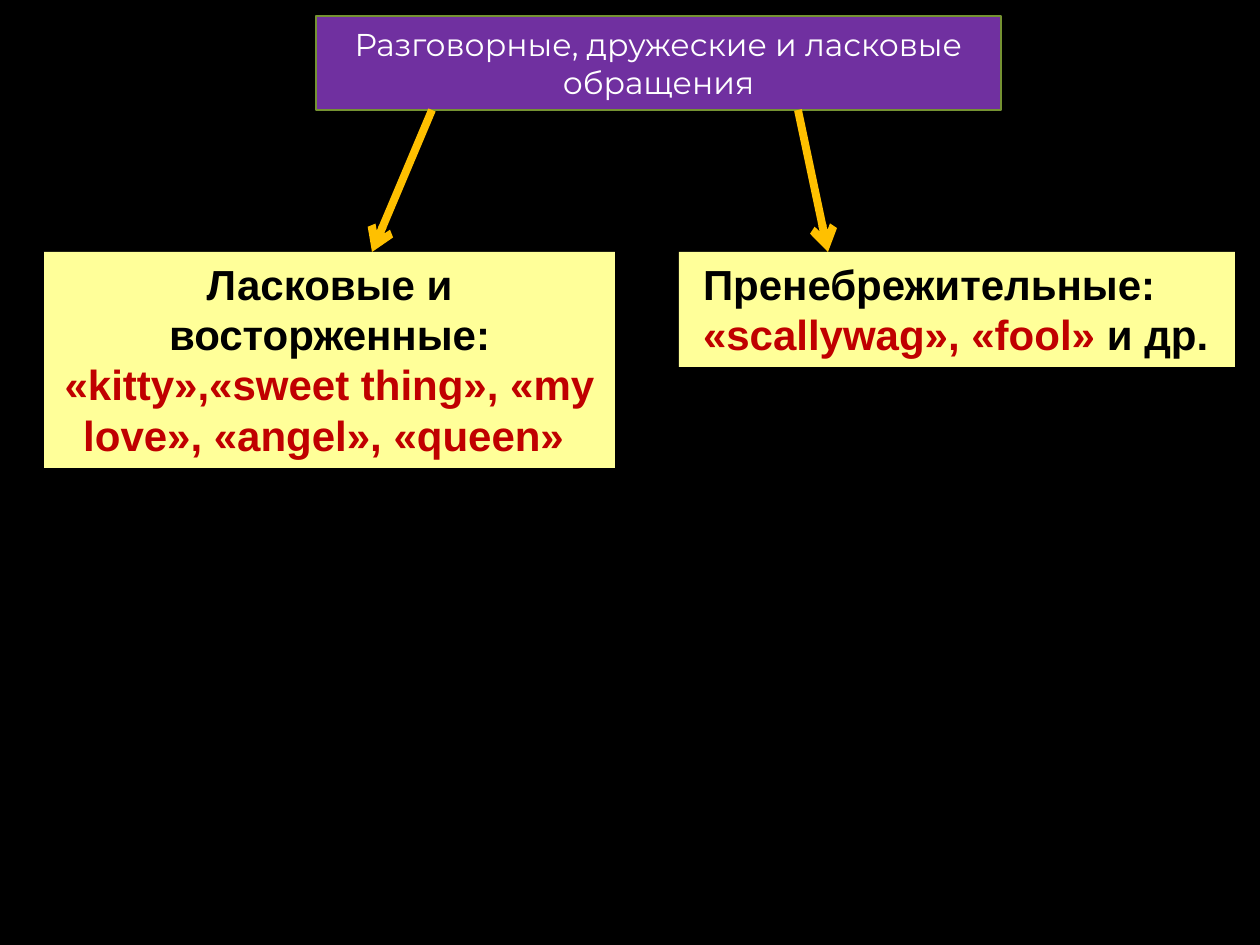
"""Build a slide that sorts informal forms of address into two groups."""
from lxml.etree import SubElement
from pptx import Presentation
from pptx.dml.color import RGBColor
from pptx.enum.shapes import MSO_CONNECTOR
from pptx.enum.text import MSO_ANCHOR, MSO_AUTO_SIZE, PP_ALIGN
from pptx.oxml.ns import qn
from pptx.util import Emu, Pt

PX_PER_INCH = 126
COLORS = {
    "background": "000000",
    "heading": "7030A0",
    "heading_border": "759232",
    "heading_text": "FFFFFF",
    "group": "FFFF99",
    "label": "000000",
    "example": "C00000",
    "arrow": "FFC000",
}


def px(length):
    """Turn pixels into EMU."""
    return Emu(round(length * 914400 / PX_PER_INCH))


def color(name):
    """Return the named colour."""
    return RGBColor.from_string(COLORS[name])


def paint(fill, name):
    """Fill with one named colour."""
    fill.solid()
    fill.fore_color.rgb = color(name)


def style_run(run, font_name, size, color_name, bold=False):
    """Set the font of a run."""
    run.font.name = font_name
    run.font.size = Pt(size)
    run.font.bold = bold
    run.font.color.rgb = color(color_name)


def format_heading(heading, text, left, top, width, height):
    """Place the title and give it a bordered panel."""
    heading.left, heading.top = px(left), px(top)
    heading.width, heading.height = px(width), px(height)
    paint(heading.fill, "heading")
    heading.line.color.rgb = color("heading_border")
    heading.line.width = Pt(1.5)
    frame = heading.text_frame
    frame.text = text
    frame.auto_size = MSO_AUTO_SIZE.NONE
    frame.vertical_anchor = MSO_ANCHOR.MIDDLE
    paragraph = frame.paragraphs[0]
    paragraph.alignment = PP_ALIGN.CENTER
    style_run(paragraph.runs[0], "Montserrat", 18, "heading_text")


def add_group(slide, box, alignment, lines):
    """Add a text panel whose lines are lists of text and colour name."""
    group = slide.shapes.add_textbox(*map(px, box))
    paint(group.fill, "group")
    frame = group.text_frame
    frame.word_wrap = True
    frame.auto_size = MSO_AUTO_SIZE.SHAPE_TO_FIT_TEXT
    for index, line in enumerate(lines):
        paragraph = frame.add_paragraph() if index else frame.paragraphs[0]
        paragraph.alignment = alignment
        for text, color_name in line:
            run = paragraph.add_run()
            run.text = text
            style_run(run, "Arial", 24, color_name, bold=True)


def add_arrow(slide, start_x, start_y, end_x, end_y):
    """Add an arrow from the heading to a group."""
    arrow = slide.shapes.add_connector(
        MSO_CONNECTOR.STRAIGHT, px(start_x), px(start_y), px(end_x), px(end_y)
    )
    arrow.line.color.rgb = color("arrow")
    arrow.line.width = Pt(4.5)
    SubElement(arrow.line._get_or_add_ln(), qn("a:tailEnd"), type="arrow")
    SubElement(arrow._element.spPr, qn("a:effectLst"))


def main():
    """Build and save the slide."""
    presentation = Presentation()
    presentation.slide_width, presentation.slide_height = px(1260), px(945)
    slide = presentation.slides.add_slide(presentation.slide_layouts[5])
    paint(slide.background.fill, "background")

    heading_bottom, group_top = 110, 252
    format_heading(
        slide.shapes.title,
        "Разговорные, дружеские и ласковые обращения",
        316, 16, 685, heading_bottom - 16,
    )
    add_group(slide, (44, group_top, 571, 216), PP_ALIGN.CENTER, [
        [("Ласковые и восторженные:", "label")],
        [("«kitty»,«sweet thing», «my love», «angel», «queen» ", "example")],
    ])
    add_group(slide, (679, group_top, 556, 115), PP_ALIGN.LEFT, [
        [(" Пренебрежительные:", "label")],
        [(" «scallywag», «fool» ", "example"), ("и др.", "label")],
    ])
    for start_x, end_x in ((432, 372), (798, 828)):
        add_arrow(slide, start_x, heading_bottom, end_x, group_top)
    presentation.save("out.pptx")


if __name__ == "__main__":
    main()
